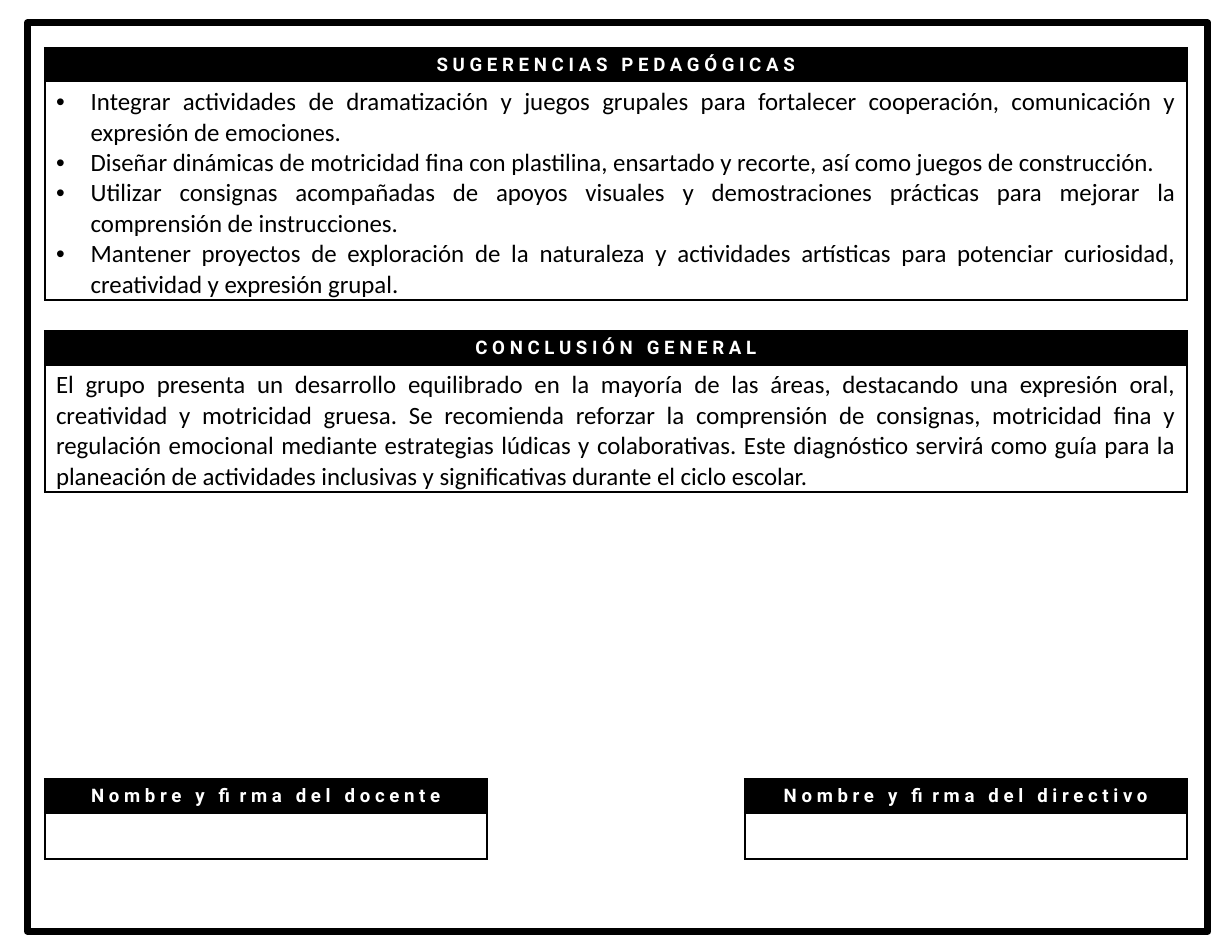
from dataclasses import dataclass

from lxml import etree
from pptx import Presentation
from pptx.dml.color import RGBColor
from pptx.enum.shapes import MSO_SHAPE
from pptx.enum.text import MSO_ANCHOR, PP_ALIGN
from pptx.oxml.ns import qn
from pptx.util import Inches, Pt

RECTANGLE = MSO_SHAPE.RECTANGLE
MIDDLE = MSO_ANCHOR.MIDDLE
CENTER = PP_ALIGN.CENTER
JUSTIFY = PP_ALIGN.JUSTIFY

BLACK = "000000"
WHITE = "FFFFFF"
BORDER_WIDTH = Pt(1.5)
HEADING_HEIGHT = 0.29
CONTENT_HEIGHT = 0.41
BULLET_INDENT = Inches(0.31)
LEFT_EDGE = 0.4
FULL_WIDTH = 10.2
SIGNATURE_WIDTH = 3.95
SIGNATURE_TOP = 6.96
SIGNATURE_HEIGHT = 1.13

HEADING_FONT = {"name": "Roboto", "size": Pt(12), "bold": True}
CONTENT_FONT = {"name": "Calibri", "size": Pt(16), "bold": False}


@dataclass(frozen=True)
class Section:
    heading: str
    left: float
    top: float
    width: float
    height: float
    content: tuple[str, ...] = ()
    bulleted: bool = False


SECTIONS = (
    Section(
        "SUGERENCIAS PEDAGÓGICAS", LEFT_EDGE, 0.43, FULL_WIDTH, 2.53,
        (
            "Integrar actividades de dramatización y juegos grupales para fortalecer "
            "cooperación, comunicación y expresión de emociones.",
            "Diseñar dinámicas de motricidad fina con plastilina, ensartado y recorte, "
            "así como juegos de construcción.",
            "Utilizar consignas acompañadas de apoyos visuales y demostraciones "
            "prácticas para mejorar la comprensión de instrucciones.",
            "Mantener proyectos de exploración de la naturaleza y actividades artísticas "
            "para potenciar curiosidad, creatividad y expresión grupal.",
        ),
        bulleted=True,
    ),
    Section(
        "CONCLUSIÓN GENERAL", LEFT_EDGE, 2.96, FULL_WIDTH, 1.47,
        (
            "El grupo presenta un desarrollo equilibrado en la mayoría de las áreas, "
            "destacando una expresión oral, creatividad y motricidad gruesa. Se recomienda "
            "reforzar la comprensión de consignas, motricidad fina y regulación emocional "
            "mediante estrategias lúdicas y colaborativas. Este diagnóstico servirá como "
            "guía para la planeación de actividades inclusivas y significativas durante "
            "el ciclo escolar.",
        ),
    ),
    Section("Nombre y firma del docente", LEFT_EDGE, SIGNATURE_TOP,
            SIGNATURE_WIDTH, SIGNATURE_HEIGHT),
    Section("Nombre y firma del directivo", LEFT_EDGE + FULL_WIDTH - SIGNATURE_WIDTH,
            SIGNATURE_TOP, SIGNATURE_WIDTH, SIGNATURE_HEIGHT),
)


def paint(color_format, color: str) -> None:
    color_format.rgb = RGBColor.from_string(color)


def style_cell(cell, fill: str) -> None:
    cell.fill.solid()
    paint(cell.fill.fore_color, fill)
    properties = cell._tc.get_or_add_tcPr()
    for position, side in enumerate(("lnL", "lnR", "lnT", "lnB")):
        border = etree.Element(qn(f"a:{side}"), w=str(BORDER_WIDTH))
        solid = etree.SubElement(border, qn("a:solidFill"))
        etree.SubElement(solid, qn("a:srgbClr"), val=BLACK)
        properties.insert(position, border)


def write(paragraph, text: str, font: dict, color: str, alignment: PP_ALIGN,
          tracking: int = 0) -> None:
    paragraph.alignment = alignment
    run = paragraph.add_run()
    run.text = text
    for attribute, value in font.items():
        setattr(run.font, attribute, value)
    paint(run.font.color, color)
    run._r.get_or_add_rPr().set("spc", str(tracking * 100))


def add_bullet(paragraph) -> None:
    properties = paragraph._p.get_or_add_pPr()
    properties.set("marL", str(BULLET_INDENT))
    properties.set("indent", str(-BULLET_INDENT))
    etree.SubElement(properties, qn("a:buFont"), typeface="Arial")
    etree.SubElement(properties, qn("a:buChar"), char="•")


def draw_section(slide, section: Section) -> None:
    frame = slide.shapes.add_table(
        2, 1, Inches(section.left), Inches(section.top),
        Inches(section.width), Inches(section.height))
    table = frame.table
    table.rows[0].height = Inches(HEADING_HEIGHT)
    table.rows[1].height = Inches(CONTENT_HEIGHT)
    frame.height = Inches(section.height)

    heading, content = table.cell(0, 0), table.cell(1, 0)
    style_cell(heading, BLACK)
    style_cell(content, WHITE)
    heading.vertical_anchor = MIDDLE
    content.margin_bottom = 0
    write(heading.text_frame.paragraphs[0], section.heading, HEADING_FONT, WHITE,
          CENTER, tracking=3)

    for index, text in enumerate(section.content):
        body = content.text_frame
        paragraph = body.add_paragraph() if index else body.paragraphs[0]
        write(paragraph, text, CONTENT_FONT, BLACK, JUSTIFY)
        if section.bulleted:
            add_bullet(paragraph)


def draw_page_border(slide) -> None:
    border = slide.shapes.add_shape(
        RECTANGLE, Inches(1.46), Inches(-1.01), Inches(8.11), Inches(10.54))
    border.rotation = 90
    border.shadow.inherit = False
    border.fill.background()
    border.line.width = Pt(4.5)
    paint(border.line.color, BLACK)


def main() -> None:
    presentation = Presentation()
    presentation.slide_width = Inches(11)
    presentation.slide_height = Inches(8.5)
    slide = presentation.slides.add_slide(presentation.slide_layouts[6])
    draw_page_border(slide)
    for section in SECTIONS:
        draw_section(slide, section)
    presentation.save("out.pptx")


if __name__ == "__main__":
    main()
